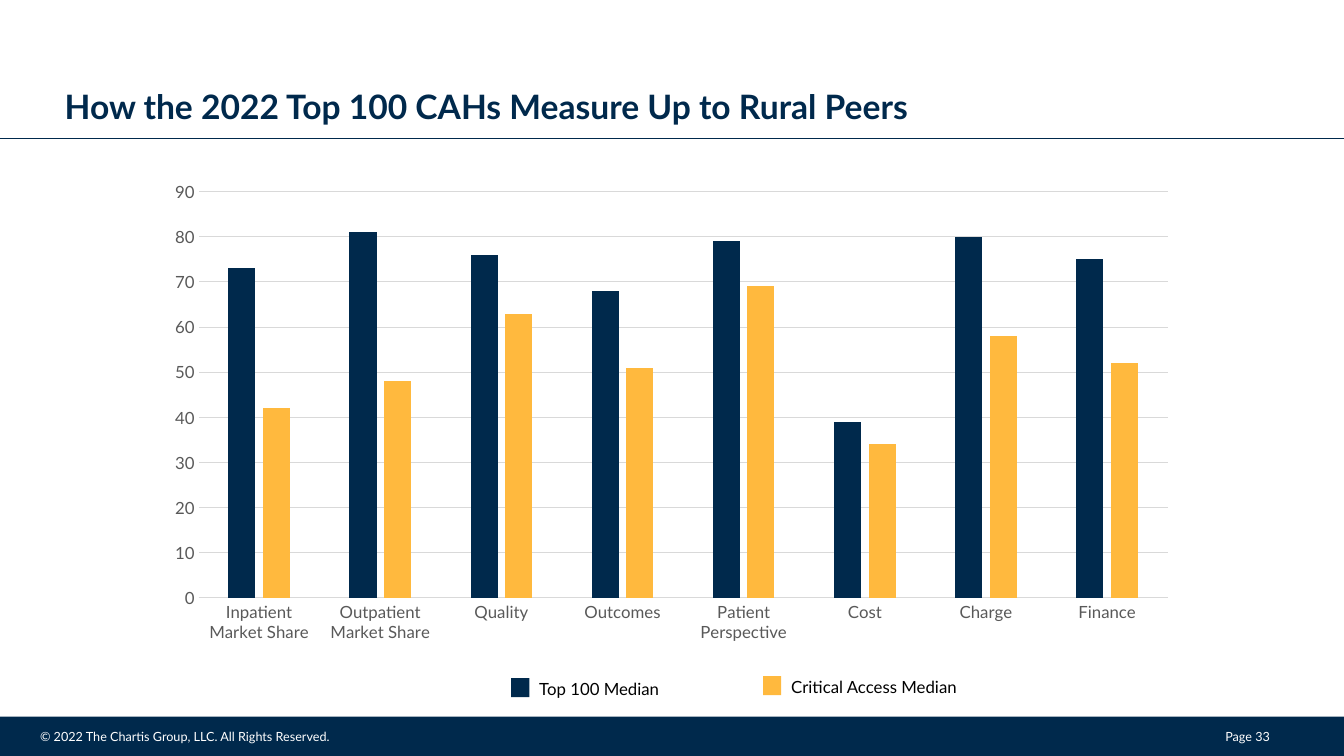
from dataclasses import dataclass

from lxml import etree
from pptx import Presentation
from pptx.chart.data import CategoryChartData
from pptx.dml.color import RGBColor
from pptx.enum.chart import XL_CHART_TYPE, XL_TICK_MARK
from pptx.enum.shapes import MSO_CONNECTOR, MSO_SHAPE
from pptx.enum.text import MSO_ANCHOR, MSO_AUTO_SIZE, PP_ALIGN
from pptx.oxml.ns import qn
from pptx.util import Cm, Pt

COLUMNS = XL_CHART_TYPE.COLUMN_CLUSTERED
NO_TICK = XL_TICK_MARK.NONE
STRAIGHT = MSO_CONNECTOR.STRAIGHT
RECTANGLE = MSO_SHAPE.RECTANGLE
BOTTOM, TOP = MSO_ANCHOR.BOTTOM, MSO_ANCHOR.TOP
NO_AUTOFIT = MSO_AUTO_SIZE.NONE
LEFT = PP_ALIGN.LEFT

TITLE = "How the 2022 Top 100 CAHs Measure Up to Rural Peers"
COPYRIGHT = "© 2022 The Chartis Group, LLC. All Rights Reserved."
PAGE_NUMBER = "Page 33"
SCORES = [  # measure, Top 100 median, Critical Access median
    ("Inpatient Market Share", 73, 42),
    ("Outpatient Market Share", 81, 48),
    ("Quality", 76, 63),
    ("Outcomes", 68, 51),
    ("Patient Perspective", 79, 69),
    ("Cost", 39, 34),
    ("Charge", 80, 58),
    ("Finance", 75, 52),
]


@dataclass(frozen=True)
class Theme:
    font: str = "Lato"
    navy: RGBColor = RGBColor(0x00, 0x29, 0x4C)
    gold: RGBColor = RGBColor(0xFF, 0xB9, 0x3E)
    white: RGBColor = RGBColor(0xFF, 0xFF, 0xFF)
    black: RGBColor = RGBColor(0x00, 0x00, 0x00)
    axis_text: RGBColor = RGBColor(0x59, 0x59, 0x59)
    grid: RGBColor = RGBColor(0xD9, 0xD9, 0xD9)
    title_size: Pt = Pt(24)
    label_size: Pt = Pt(12)
    footer_size: Pt = Pt(9)
    hairline: Pt = Pt(0.5)
    grid_line: Pt = Pt(0.75)


THEME = Theme()
SERIES = [  # name, colour, left and top of the legend key in cm
    ("Top 100 Median", THEME.navy, 12.88, 17.09),
    ("Critical Access Median", THEME.gold, 19.23, 17.04),
]
PAGE_WIDTH, PAGE_HEIGHT = 33.87, 19.05
BAND_TOP, RULE_TOP = 18.06, 3.48
KEY_WIDTH, KEY_HEIGHT = 0.46, 0.48


def set_font(font, size, color, bold=False):
    font.name = THEME.font
    font.size = size
    font.bold = bold
    font.color.rgb = color


def write(frame, text, size, color, bold=False, anchor=TOP, line_spacing=None):
    frame.word_wrap = True
    frame.auto_size = NO_AUTOFIT
    frame.vertical_anchor = anchor
    para = frame.paragraphs[0]
    para.alignment = LEFT
    para.line_spacing = line_spacing
    span = para.add_run()
    span.text = text
    set_font(span.font, size, color, bold)


def add_text(page, area, text, **text_format):
    box = page.shapes.add_textbox(*map(Cm, area))
    write(box.text_frame, text, **text_format)


def add_block(page, area, color):
    block = page.shapes.add_shape(RECTANGLE, *map(Cm, area))
    block.shadow.inherit = False
    block.fill.solid()
    block.fill.fore_color.rgb = color
    block.line.fill.background()


def add_title(page):
    title = page.shapes.title
    title.left, title.top, title.width, title.height = map(Cm, (1.63, 0, 22.5, 3.18))
    frame = title.text_frame
    frame.margin_left = frame.margin_right = frame.margin_top = frame.margin_bottom = 0
    write(frame, TITLE, size=THEME.title_size, color=THEME.navy, bold=True,
          anchor=BOTTOM, line_spacing=1.08)
    rule = page.shapes.add_connector(
        STRAIGHT, 0, Cm(RULE_TOP), Cm(PAGE_WIDTH), Cm(RULE_TOP))
    rule.line.color.rgb = THEME.navy
    rule.line.width = THEME.hairline
    etree.SubElement(rule.element.spPr, qn("a:effectLst"))


def add_footer(page):
    add_block(page, (0, BAND_TOP, PAGE_WIDTH, PAGE_HEIGHT - BAND_TOP), THEME.navy)
    for text, left, width in ((COPYRIGHT, 0.76, 11.38), (PAGE_NUMBER, 30.63, 2.67)):
        add_text(page, (left, 18.24, width, 0.66), text,
                 size=THEME.footer_size, color=THEME.white)


def add_score_chart(page):
    measures, *medians = zip(*SCORES)
    data = CategoryChartData()
    data.categories = measures
    for (name, *_), values in zip(SERIES, medians):
        data.add_series(name, values)
    area = map(Cm, (3.89, 4.34, 26.06, 12.07))
    chart = page.shapes.add_chart(COLUMNS, *area, data).chart
    chart.has_legend = False
    chart.has_title = False
    set_font(chart.font, THEME.label_size, THEME.axis_text)

    plot = chart.plots[0]
    plot.vary_by_categories = False
    plot.gap_width = 219
    plot.overlap = -27
    for series, (_, color, *_) in zip(plot.series, SERIES):
        series.format.fill.solid()
        series.format.fill.fore_color.rgb = color

    for axis in (chart.category_axis, chart.value_axis):
        axis.major_tick_mark = axis.minor_tick_mark = NO_TICK
        set_font(axis.tick_labels.font, THEME.label_size, THEME.axis_text)
    scale = chart.value_axis
    scale.minimum_scale, scale.maximum_scale, scale.major_unit = 0, 90, 10
    scale.format.line.fill.background()
    for line in (chart.category_axis.format.line, scale.major_gridlines.format.line):
        line.color.rgb = THEME.grid
        line.width = THEME.grid_line


def add_legend(page):
    for name, color, left, top in SERIES:
        add_block(page, (left, top, KEY_WIDTH, KEY_HEIGHT), color)
        add_text(page, (left + KEY_WIDTH, top - 0.12, 5.64, 0.76), name,
                 size=THEME.label_size, color=THEME.black)


def main():
    deck = Presentation()
    deck.slide_width, deck.slide_height = Cm(PAGE_WIDTH), Cm(PAGE_HEIGHT)
    page = deck.slides.add_slide(deck.slide_layouts.get_by_name("Title Only"))
    add_footer(page)
    add_title(page)
    add_score_chart(page)
    add_legend(page)
    deck.save("out.pptx")


if __name__ == "__main__":
    main()
